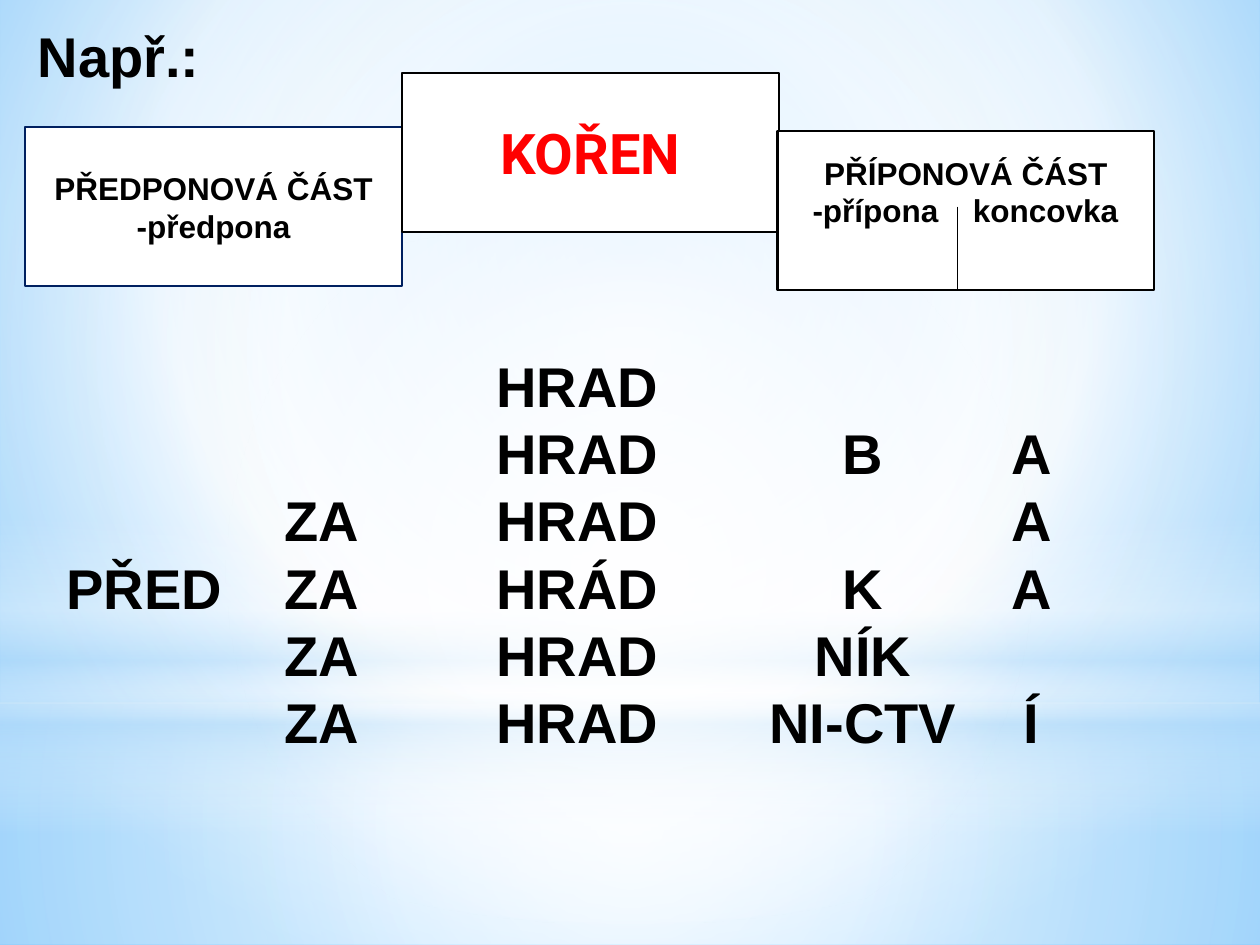
import lxml.etree
import pptx
import pptx.dml.color
import pptx.enum.shapes
import pptx.enum.text
import pptx.oxml.ns
import pptx.util

Inches = pptx.util.Inches
Pt = pptx.util.Pt
Align = pptx.enum.text.PP_ALIGN
Anchor = pptx.enum.text.MSO_ANCHOR
Shape = pptx.enum.shapes.MSO_SHAPE
qn = pptx.oxml.ns.qn

CENTRE = (50, 50, 50, 50)
WHITE = "FFFFFF"
BLACK = "000000"
PALE_BLUE = "B4DCFA"
HALO_BOXES = [
    (0, 5.58, 10, 1.92, [(0, WHITE, 91), (37, WHITE, 76), (100, PALE_BLUE, 79)]),
    (0, 0, 10, 5.58, [(0, WHITE, 89), (48, WHITE, 62), (100, PALE_BLUE, 79)]),
]
HORIZON_STOPS = [(0, WHITE, 0), (29, WHITE, 30), (45, PALE_BLUE, 40),
                 (55, WHITE, 26), (65, PALE_BLUE, 60), (100, WHITE, 0)]
WORD_ROWS = [
    ("", "", "HRAD", "", ""),
    ("", "", "HRAD", "B", "A"),
    ("", "ZA", "HRAD", "", "A"),
    ("PŘED", "ZA", "HRÁD", "K", "A"),
    ("", "ZA", "HRAD", "NÍK", ""),
    ("", "ZA", "HRAD", "NI-CTV", "Í"),
]
WORD_TABS = [(1.73, "l"), (3.41, "l"), (6.32, "ctr"), (7.66, "ctr")]


def colour(value):
    return pptx.dml.color.RGBColor.from_string(value)


def add_xml(parent, tag, **attributes):
    return lxml.etree.SubElement(
        parent, qn(tag), {key: str(value) for key, value in attributes.items()})


def set_gradient(fill, owner, stops, focus=None):
    fill.gradient()
    gradient = next(owner.iter(qn("a:gradFill")))
    for child in list(gradient):
        gradient.remove(child)
    stop_list = add_xml(gradient, "a:gsLst")
    for position, value, opacity in stops:
        stop = add_xml(stop_list, "a:gs", pos=position * 1000)
        tone = add_xml(stop, "a:srgbClr", val=value)
        if opacity < 100:
            add_xml(tone, "a:alpha", val=opacity * 1000)
    if focus:
        circle = add_xml(gradient, "a:path", path="circle")
        sides = zip("ltrb", focus)
        add_xml(circle, "a:fillToRect", **{side: share * 1000 for side, share in sides})
    else:
        add_xml(gradient, "a:lin", ang=90 * 60000, scaled=0)


def set_tabs(paragraph, stops):
    tab_list = add_xml(paragraph._p.get_or_add_pPr(), "a:tabLst")
    for position, alignment in stops:
        add_xml(tab_list, "a:tab", pos=Inches(position), algn=alignment)


def write(frame, text, size=32, font="Arial", color=BLACK, align=Align.LEFT,
          anchor=Anchor.TOP, wrap=True, spacing=None):
    frame.word_wrap = wrap
    frame.auto_size = pptx.enum.text.MSO_AUTO_SIZE.NONE
    frame.vertical_anchor = anchor
    for index, line in enumerate(text.split("\n")):
        paragraph = frame.add_paragraph() if index else frame.paragraphs[0]
        paragraph.alignment = align
        if spacing:
            paragraph.line_spacing = spacing
        run = paragraph.add_run()
        run.text = line
        run.font.size = Pt(size)
        run.font.name = font
        run.font.bold = True
        run.font.color.rgb = colour(color)
    return frame.paragraphs


def add_glow(slide, kind, left, top, width, height, stops, focus=None):
    glow = slide.shapes.add_shape(
        kind, Inches(left), Inches(top), Inches(width), Inches(height))
    glow.shadow.inherit = False
    glow.line.fill.background()
    set_gradient(glow.fill, glow.element, stops, focus)
    return glow


def add_backdrop(slide):
    master = slide.slide_layout.slide_master
    set_gradient(master.background.fill, master.element,
                 [(0, "9ED5FF", 100), (60, WHITE, 100), (100, "5BB9FF", 100)],
                 (20, 10, 20, 60))
    glows = [add_glow(slide, Shape.RECTANGLE, *box, CENTRE) for box in HALO_BOXES]
    glows.append(add_glow(slide, Shape.RECTANGLE, 0, 4.12, 10, 2.5, HORIZON_STOPS))
    glows.append(add_glow(slide, Shape.OVAL, 0, 1.75, 10, 5.58,
                          [(0, WHITE, 100), (56, WHITE, 0)], CENTRE))
    for index, glow in enumerate(glows):
        glow.element.nvSpPr.cNvPr.set("id", str(100 + index))
        master.shapes.element.insert(2 + index, glow.element)


def add_title(slide, left, top, width, height):
    title = slide.shapes.title
    title.left, title.top = Inches(left), Inches(top)
    title.width, title.height = Inches(width), Inches(height)
    write(title.text_frame, "Např.:", wrap=False)


def add_part_box(slide, left, top, outline=BLACK):
    box = slide.shapes.add_shape(
        Shape.RECTANGLE, Inches(left), Inches(top), Inches(2.99), Inches(1.26))
    box.shadow.inherit = False
    box.fill.solid()
    box.fill.fore_color.rgb = colour(WHITE)
    box.line.color.rgb = colour(outline)
    box.line.width = Pt(1.25)
    return box.text_frame


def add_prefix_box(slide, left, top):
    write(add_part_box(slide, left, top, "002060"), "PŘEDPONOVÁ ČÁST\n-předpona",
          size=18, align=Align.CENTER, anchor=Anchor.MIDDLE)


def add_root_box(slide, left, top):
    write(add_part_box(slide, left, top), "KOŘEN", font="Roboto", color="FF0000",
          align=Align.CENTER, anchor=Anchor.MIDDLE)


def add_suffix_box(slide, left, top):
    frame = add_part_box(slide, left, top)
    frame.margin_top = Inches(0.18)
    heading, endings = write(frame, "PŘÍPONOVÁ ČÁST\n\t-přípona\tkoncovka", size=18)
    heading.alignment = Align.CENTER
    set_tabs(endings, [(0.68, "ctr"), (2.03, "ctr")])
    divider = slide.shapes.add_connector(
        pptx.enum.shapes.MSO_CONNECTOR.STRAIGHT,
        Inches(left + 1.43), Inches(top + 0.6), Inches(left + 1.43), Inches(top + 1.26))
    divider.line.color.rgb = colour(BLACK)
    divider.line.width = Pt(0.75)
    add_xml(divider.element.spPr, "a:effectLst")


def add_word_rows(slide, left, top, width, height):
    rows = slide.shapes.add_textbox(
        Inches(left), Inches(top), Inches(width), Inches(height))
    text = "\n".join("\t".join(row).rstrip("\t") for row in WORD_ROWS)
    for paragraph in write(rows.text_frame, text, spacing=Pt(38.4)):
        set_tabs(paragraph, WORD_TABS)


def main():
    deck = pptx.Presentation()
    deck.slide_width, deck.slide_height = Inches(10), Inches(7.5)
    slide = deck.slides.add_slide(deck.slide_layouts[5])
    add_backdrop(slide)
    add_title(slide, 0.2, 0.12, 1.5, 0.64)
    add_word_rows(slide, 0.43, 2.74, 8.91, 3.3)
    add_prefix_box(slide, 0.2, 1.01)
    add_root_box(slide, 3.19, 0.58)
    add_suffix_box(slide, 6.17, 1.04)
    deck.save("out.pptx")


if __name__ == "__main__":
    main()
